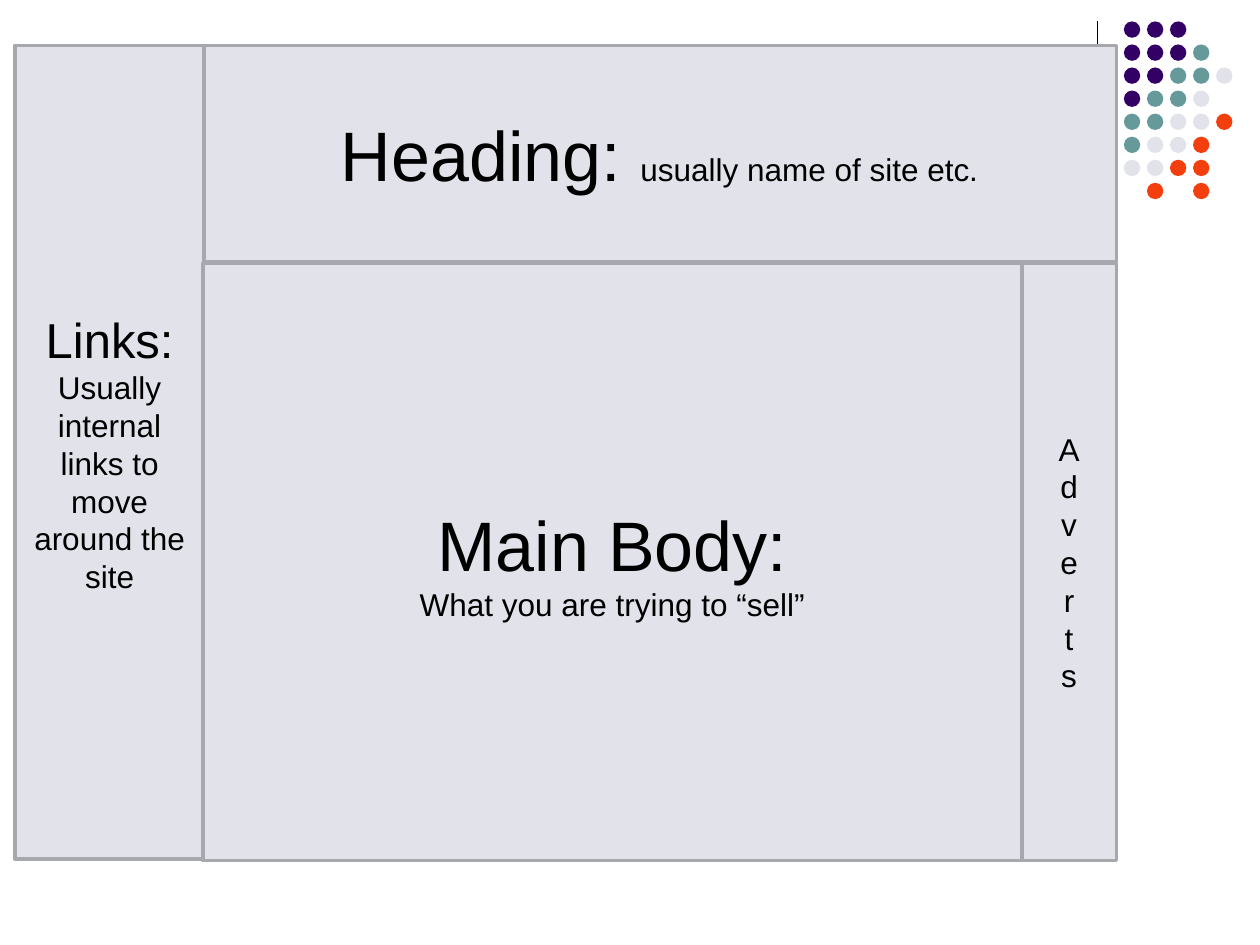
from dataclasses import dataclass

from lxml import etree
from pptx import Presentation
from pptx.dml.color import RGBColor
from pptx.enum import shapes, text
from pptx.oxml.ns import qn
from pptx.util import Inches, Pt

COLORS = {
    "black": "000000",
    "border": "A7A8AD",
    "purple": "330066",
    "teal": "669999",
    "pale": "E2E3EA",
    "orange": "F33E0D",
}
DOT_COLORS = {"P": "purple", "T": "teal", "L": "pale", "O": "orange"}
DOT_ROWS = ["PPP", "PPPT", "PPTTL", "PTTL", "TTLLO", "TLLO", "LLOO", " O O"]
DOT_LEFT, DOT_TOP, DOT_SIZE = 8.92, 0.17, 0.13
DOT_PITCH_X, DOT_PITCH_Y = 0.183, 0.183


@dataclass
class Run:
    content: str
    size: int


@dataclass
class Panel:
    left: float
    top: float
    width: float
    height: float
    paragraphs: list[list[Run]]
    vertical: bool = False


PANELS = [
    Panel(1.61, 0.36, 7.25, 1.72,
          [[Run("Heading: ", 40), Run("usually name of site etc.", 18)]]),
    Panel(0.12, 0.36, 1.5, 6.46,
          [[Run("Links:", 28)],
           [Run("Usually internal links to move around the site", 18)]]),
    Panel(1.61, 2.09, 6.5, 4.74,
          [[Run("Main Body:", 40)],
           [Run("What you are trying to “sell”", 18)]]),
    Panel(8.11, 2.09, 0.75, 4.74, [[Run("Adverts", 18)]], vertical=True),
]


def rgb(name: str) -> RGBColor:
    return RGBColor.from_string(COLORS[name])


def add_filled(s, kind, left: float, top: float, width: float, height: float, color: str):
    sp = s.shapes.add_shape(kind, Inches(left), Inches(top), Inches(width), Inches(height))
    sp.shadow.inherit = False
    sp.fill.solid()
    sp.fill.fore_color.rgb = rgb(color)
    return sp


def draw_divider(s) -> None:
    line = s.shapes.add_connector(shapes.MSO_CONNECTOR.STRAIGHT,
                                  Inches(8.71), Inches(0.17), Inches(8.71), Inches(1.83))
    line.line.color.rgb = rgb("black")
    line.line.width = Pt(0.75)
    etree.SubElement(line.element.spPr, qn("a:effectLst"))


def draw_dots(s) -> None:
    for row, codes in enumerate(DOT_ROWS):
        for col, code in enumerate(codes):
            if code in DOT_COLORS:
                dot = add_filled(s, shapes.MSO_SHAPE.OVAL,
                                 DOT_LEFT + col * DOT_PITCH_X, DOT_TOP + row * DOT_PITCH_Y,
                                 DOT_SIZE, DOT_SIZE, DOT_COLORS[code])
                dot.line.fill.background()


def draw_panel(s, panel: Panel) -> None:
    sp = add_filled(s, shapes.MSO_SHAPE.RECTANGLE,
                    panel.left, panel.top, panel.width, panel.height, "pale")
    sp.line.color.rgb = rgb("border")
    sp.line.width = Pt(2)
    tf = sp.text_frame
    tf.word_wrap = True
    tf.vertical_anchor = text.MSO_ANCHOR.MIDDLE
    if panel.vertical:
        sp.element.txBody.bodyPr.set("vert", "wordArtVert")
    for i, runs in enumerate(panel.paragraphs):
        p = tf.add_paragraph() if i else tf.paragraphs[0]
        p.alignment = text.PP_ALIGN.CENTER
        for run in runs:
            r = p.add_run()
            r.text = run.content
            r.font.name = "Arial"
            r.font.size = Pt(run.size)
            r.font.color.rgb = rgb("black")


def main() -> None:
    prs = Presentation()
    prs.slide_width, prs.slide_height = Inches(10), Inches(7.5)
    s = prs.slides.add_slide(prs.slide_layouts[6])
    draw_divider(s)
    draw_dots(s)
    for panel in PANELS:
        draw_panel(s, panel)
    prs.save("out.pptx")


if __name__ == "__main__":
    main()
